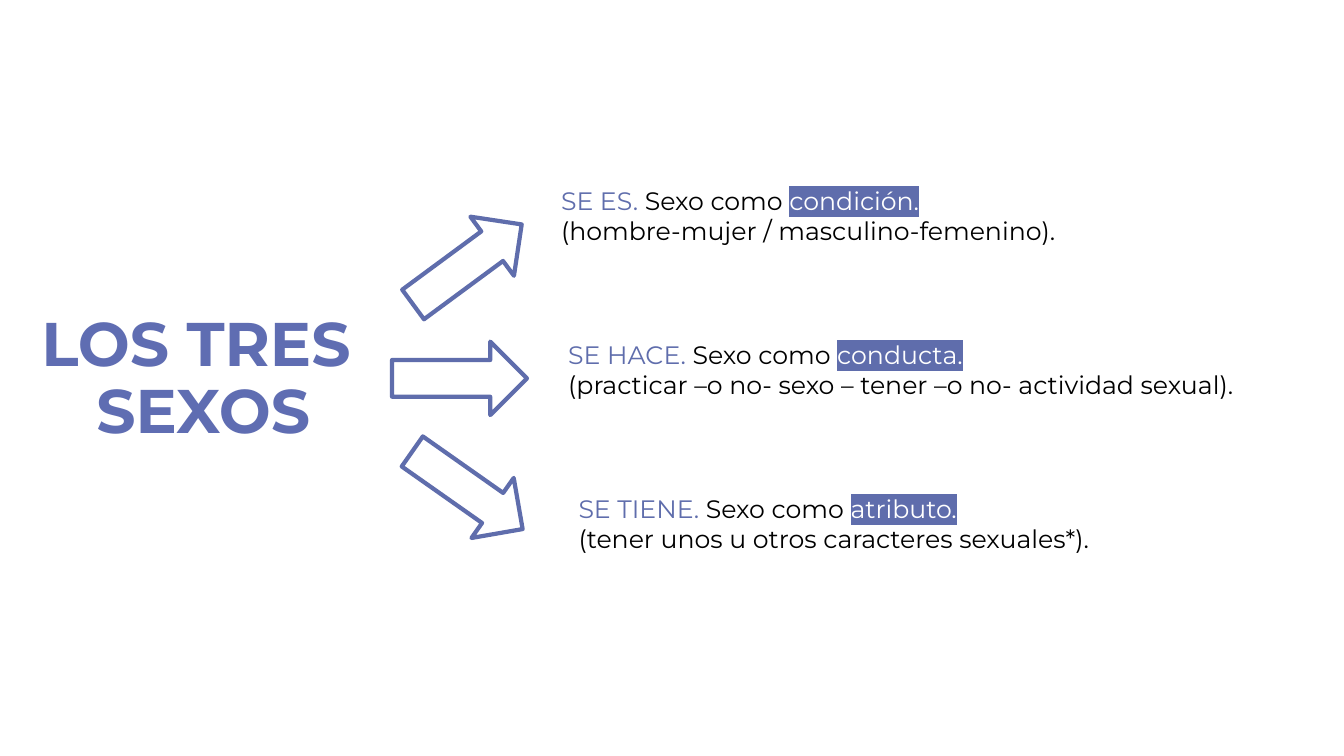
from lxml import etree
from pptx import Presentation
from pptx import util as u
from pptx.dml.color import RGBColor
from pptx.enum import shapes, text
from pptx.oxml import ns


class Theme:
    face = "Montserrat"
    head = RGBColor.from_string("5F6DB2")
    main = RGBColor.from_string("5F6DAC")
    ink = RGBColor.from_string("000000")
    white = RGBColor.from_string("FFFFFF")
    big = u.Pt(44)
    body = u.Pt(18)
    line = u.Pt(3)


def add_box(left, top, width, height):
    box = slide.shapes.add_textbox(u.Cm(left), u.Cm(top), u.Cm(width), u.Cm(height))
    box.text_frame.word_wrap = True
    return box.text_frame


def add_run(para, words, color, mark=None):
    run = para.add_run()
    run.text = words
    run.font.color.rgb = color
    if mark is not None:
        light = etree.SubElement(run.font._element, ns.qn("a:highlight"))
        etree.SubElement(light, ns.qn("a:srgbClr"), val=str(mark))


deck = Presentation()
deck.slide_width, deck.slide_height = u.Cm(33.87), u.Cm(19.05)
slide = deck.slides.add_slide(deck.slide_layouts[6])

# Title, with the second line set slightly to the right
frame = add_box(0.41, 7.77, 9.07, 3.07)
for row, (words, indent) in enumerate([("LOS TRES", 0), ("SEXOS", 0.36)]):
    para = frame.add_paragraph() if row else frame.paragraphs[0]
    para.alignment = text.PP_ALIGN.CENTER
    para.line_spacing = 0.9
    para._p.get_or_add_pPr().set("marL", str(u.Cm(indent)))
    para.font.name, para.font.size, para.font.bold = Theme.face, Theme.big, True
    add_run(para, words, Theme.head)

# Arrows fanning out from the title
for left, top, turn in [(9.88, 8.61, 0), (10.08, 11.43, 35.1), (10.08, 5.74, 323.6)]:
    arrow = slide.shapes.add_shape(
        shapes.MSO_SHAPE.RIGHT_ARROW, u.Cm(left), u.Cm(top), u.Cm(3.4), u.Cm(1.85))
    arrow.rotation = turn
    arrow.shadow.inherit = False
    arrow.fill.solid()
    arrow.fill.fore_color.rgb = Theme.white
    arrow.line.color.rgb = Theme.main
    arrow.line.width = Theme.line

# The three meanings, evenly spaced down the slide
senses = [
    (13.89, 15.14, "SE ES. ", "condición.", "(hombre-mujer / masculino-femenino)."),
    (14.07, 18.16, "SE HACE. ", "conducta.",
     "(practicar –o no- sexo – tener –o no- actividad sexual)."),
    (14.33, 15.14, "SE TIENE. ", "atributo.",
     "(tener unos u otros caracteres sexuales*)."),
]
for row, (left, width, verb, key, note) in enumerate(senses):
    frame = add_box(left, 4.54 + 3.88 * row, width, 1.8)
    frame.auto_size = text.MSO_AUTO_SIZE.SHAPE_TO_FIT_TEXT
    first, second = frame.paragraphs[0], frame.add_paragraph()
    for para in (first, second):
        para.font.name, para.font.size = Theme.face, Theme.body
    add_run(first, verb, Theme.main)
    add_run(first, "Sexo como ", Theme.ink)
    add_run(first, key, Theme.white, Theme.main)
    add_run(second, note, Theme.ink)

deck.save("out.pptx")
